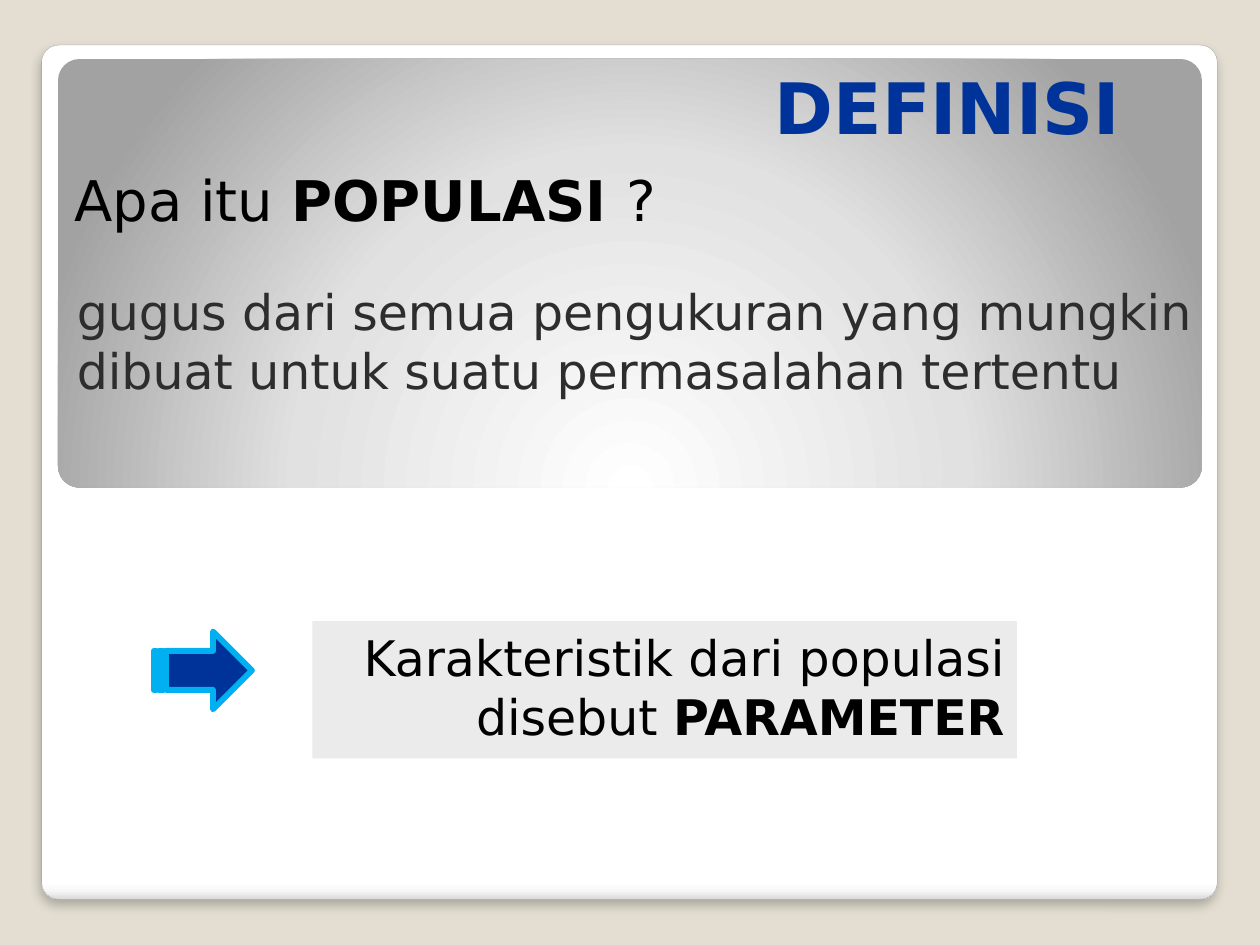
"""Build the DEFINISI slide on population and parameter."""
from lxml.etree import SubElement
from pptx import Presentation
from pptx.dml.color import RGBColor as Rgb
from pptx.enum.shapes import MSO_SHAPE as Preset
from pptx.enum.text import MSO_ANCHOR as Anchor, MSO_AUTO_SIZE as AutoSize, PP_ALIGN as Align
from pptx.oxml import parse_xml
from pptx.oxml.ns import nsdecls, qn
from pptx.util import Cm, Pt

COLORS = {"page": "E3DED1", "edge": "A4A4A4", "title": "003399", "black": "000000",
          "body": "2D2D2D", "box": "EBEBEB", "arrow": "003399", "arrow_edge": "00B0F0"}
COLORS = {name: Rgb.from_string(value) for name, value in COLORS.items()}


def fill_gradient(shape, stops, direction):
    """Give the shape a gradient with any number of stops."""
    stop_xml = "".join(f'<a:gs pos="{percent * 1000}"><a:srgbClr val="{color}"/></a:gs>'
                       for percent, color in stops)
    shape.fill.gradient()
    properties = shape.element.spPr
    properties.replace(properties.find(qn("a:gradFill")), parse_xml(
        f'<a:gradFill {nsdecls("a")} rotWithShape="1"><a:gsLst>{stop_xml}</a:gsLst>'
        f'{direction}</a:gradFill>'))


def write_text(shape, runs, size, color, align=Align.LEFT, anchor=Anchor.TOP,
               margins=(0.25, 0.13, 0.25, 0.13), before=3):
    """Write one paragraph of (text, bold) runs."""
    frame = shape.text_frame
    left, top, right, bottom = map(Cm, margins)
    frame_format = {"word_wrap": True, "auto_size": AutoSize.NONE, "vertical_anchor": anchor,
                    "margin_left": left, "margin_top": top,
                    "margin_right": right, "margin_bottom": bottom}
    for name, value in frame_format.items():
        setattr(frame, name, value)
    para = frame.paragraphs[0]
    para_format = {"alignment": align, "space_before": Pt(before), "line_spacing": 1.0}
    for name, value in para_format.items():
        setattr(para, name, value)
    for text, bold in runs:
        span = para.add_run()
        span.text = text
        for name, value in {"name": "DejaVu Sans", "size": Pt(size), "bold": bold}.items():
            setattr(span.font, name, value)
        span.font.color.rgb = COLORS[color]


deck = Presentation()
deck.slide_width, deck.slide_height = Cm(25.4), Cm(19.05)
page = deck.slides.add_slide(deck.slide_layouts[5])
page.background.fill.solid()
page.background.fill.fore_color.rgb = COLORS["page"]
shapes = page.shapes

card = shapes.add_shape(Preset.ROUNDED_RECTANGLE, Cm(0.84), Cm(0.91), Cm(23.7), Cm(17.22))
card.adjustments[0] = 0.02
fill_gradient(card, [(0, "FFFFFF"), (98, "FFFFFF"), (99, "F7F7F7"), (100, "DADADA")],
              '<a:lin ang="5400000" scaled="0"/>')
card.line.color.rgb = COLORS["edge"]
card.line.width = Pt(0.16)
card.shadow.inherit = False
card.element.spPr.find(qn("a:effectLst")).append(parse_xml(
    f'<a:outerShdw {nsdecls("a")} blurRad="{Pt(6)}" dist="{Pt(4)}" dir="5400000" '
    'algn="t" rotWithShape="0"><a:srgbClr val="000000"><a:alpha val="25000"/>'
    '</a:srgbClr></a:outerShdw>'))

panel = shapes.add_shape(Preset.ROUNDED_RECTANGLE, Cm(1.17), Cm(1.19), Cm(23.06), Cm(8.64))
panel.adjustments[0] = 0.05
fill_gradient(panel, [(0, "FFFFFF"), (55, "E1E1E1"), (100, "A2A2A2")],
              '<a:path path="circle"><a:fillToRect l="50000" t="175000" r="50000" b="-75000"/>'
              '</a:path>')
panel.line.fill.background()
panel.shadow.inherit = False

title = shapes.title
title.left, title.top, title.width, title.height = Cm(15.49), Cm(1.73), Cm(8.33), Cm(1.4)
shapes.element.append(title.element)
write_text(title, [("DEFINISI", True)], 40.5, "title", anchor=Anchor.BOTTOM,
           margins=(0.13, 0.13, 0.13, 0.13), before=0)

question = shapes.add_textbox(Cm(0.89), Cm(3.33), Cm(14), Cm(1.78))
write_text(question, [("Apa itu ", False), ("POPULASI ", True), ("?", False)], 32, "black",
           margins=(0.61, 0, 0.25, 0.13))

definition = shapes.add_textbox(Cm(1.3), Cm(5.54), Cm(23.01), Cm(4.19))
write_text(definition, [("gugus dari semua pengukuran yang mungkin dibuat untuk suatu "
                         "permasalahan tertentu", False)], 28, "body")

parameter_box = shapes.add_shape(Preset.RECTANGLE, Cm(6.3), Cm(12.52), Cm(14.2), Cm(2.77))
write_text(parameter_box, [("Karakteristik dari populasi disebut ", False),
                           ("PARAMETER", True)], 28, "black", align=Align.RIGHT)
parameter_box.line.fill.background()

arrow = shapes.add_shape(Preset.STRIPED_RIGHT_ARROW, Cm(3.1), Cm(12.73), Cm(1.98), Cm(1.57))
arrow.line.color.rgb = COLORS["arrow_edge"]
arrow.line.width = Pt(3.35)
SubElement(arrow.element.spPr.find(qn("a:ln")), qn("a:round"))

for shape, color in ((parameter_box, "box"), (arrow, "arrow")):
    shape.fill.solid()
    shape.fill.fore_color.rgb = COLORS[color]
    shape.shadow.inherit = False

deck.save("out.pptx")
